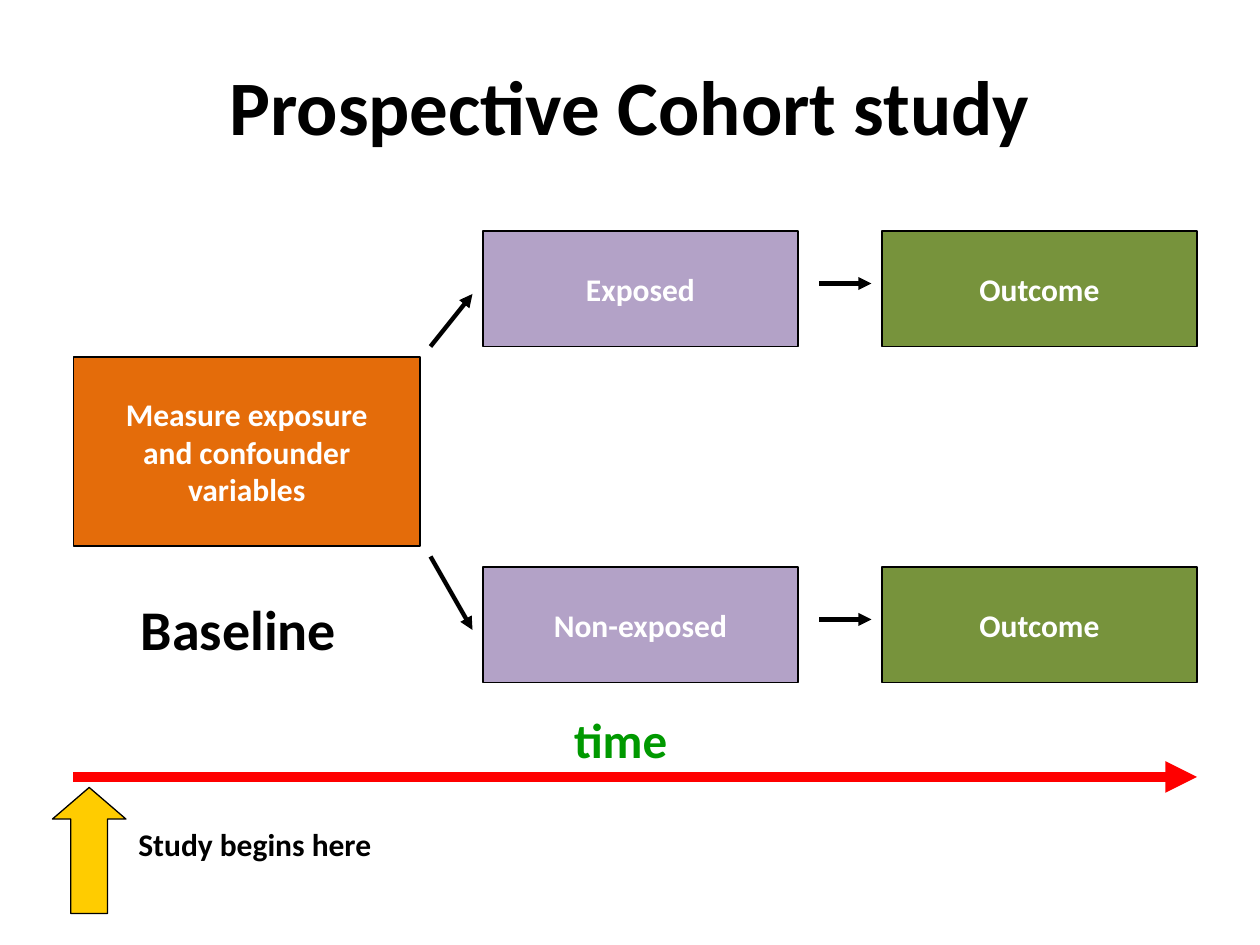
from lxml.etree import SubElement
from pptx import Presentation
from pptx.dml.color import RGBColor
from pptx.enum.shapes import MSO_CONNECTOR as Connector, MSO_SHAPE as Preset
from pptx.enum.text import MSO_ANCHOR as Anchor, MSO_AUTO_SIZE as AutoSize, PP_ALIGN as Align
from pptx.oxml.ns import qn
from pptx.util import Inches, Pt

COLORS = {
    "black": "000000",
    "white": "FFFFFF",
    "measure": "E46C0A",
    "exposure": "B3A2C7",
    "outcome": "77933C",
    "time_axis": "FF0000",
    "time_label": "009900",
    "start": "FFCC00",
}
COLUMNS, ROWS = 120, 90
CELL = Inches(10) // COLUMNS


def color(name):
    return RGBColor.from_string(COLORS[name])


def grid(*cells):
    return [round(cell * CELL) for cell in cells]


def write(text_frame, text, size, color_name, align, anchor=Anchor.TOP, wrap=False):
    text_frame.text = text
    text_frame.word_wrap = wrap
    text_frame.vertical_anchor = anchor
    for paragraph in text_frame.paragraphs:
        paragraph.alignment = align
        for run in paragraph.runs:
            run.font.name = "Calibri"
            run.font.size = Pt(size)
            run.font.bold = True
            run.font.color.rgb = color(color_name)


def add_label(slide, box, text, size, color_name="black"):
    label = slide.shapes.add_textbox(*grid(*box))
    write(label.text_frame, text, size, color_name, Align.LEFT)
    label.text_frame.auto_size = AutoSize.SHAPE_TO_FIT_TEXT


def add_block(slide, preset, box, fill):
    shape = slide.shapes.add_shape(preset, *grid(*box))
    shape.shadow.inherit = False
    shape.fill.solid()
    shape.fill.fore_color.rgb = color(fill)
    shape.line.color.rgb = color("black")
    shape.line.width = Pt(0.75)
    return shape


def add_step(slide, box, text, fill):
    step = add_block(slide, Preset.RECTANGLE, box, fill)
    write(step.text_frame, text, 18, "white", Align.CENTER, Anchor.MIDDLE)


def add_arrow(slide, start, end, color_name="black", width=2.5):
    arrow = slide.shapes.add_connector(Connector.STRAIGHT, *grid(*start, *end))
    arrow.line.color.rgb = color(color_name)
    arrow.line.width = Pt(width)
    SubElement(arrow.line._get_or_add_ln(), qn("a:tailEnd"), type="triangle")
    SubElement(arrow._element.spPr, qn("a:effectLst"))


def add_title(slide, box, text):
    title = slide.shapes.title
    title.left, title.top, title.width, title.height = grid(*box)
    write(title.text_frame, text, 44, "black", Align.CENTER, wrap=True)
    title.text_frame.auto_size = AutoSize.NONE


def add_baseline(slide, box):
    left, top, width, height = box
    add_step(slide, box, "Measure exposure\nand confounder\nvariables", "measure")
    add_label(slide, (left + 5.25, top + height + 4, 21.4, 7.6), "Baseline", 32)


def add_branch(slide, box, group):
    """Place an exposure group, its outcome and the arrow between them."""
    left, top, width, height = box
    step_width = 30
    right = left + width
    add_step(slide, (left, top, step_width, height), group, "exposure")
    add_step(slide, (right - step_width, top, step_width, height), "Outcome", "outcome")
    add_arrow(slide, (left + step_width + 2, top + 5), (right - step_width - 1, top + 5))


def add_timeline(slide, box):
    """Place the time axis along the top of the box and the start marker below."""
    left, top, width, height = box
    add_arrow(slide, (left, top), (left + width, top), "time_axis", 6)
    add_label(slide, (left + 46.5, top - 7, 11.3, 6.8), "time", 28, "time_label")
    marker = add_block(slide, Preset.UP_ARROW, (left - 2, top + 1, 7, height - 1), "start")
    marker.adjustments[0] = 0.5
    marker.adjustments[1] = 0.43
    add_label(slide, (left + 5, top + 4, 32.9, 6), "Study begins here", 18)


def main():
    presentation = Presentation()
    presentation.slide_width, presentation.slide_height = grid(COLUMNS, ROWS)
    slide = presentation.slides.add_slide(presentation.slide_layouts[5])
    add_title(slide, (9, 5, 102, 9), "Prospective Cohort study")
    add_baseline(slide, (7, 34, 33, 18))
    add_branch(slide, (46, 22, 68, 11), "Exposed")
    add_branch(slide, (46, 54, 68, 11), "Non-exposed")
    add_arrow(slide, (41, 33), (45, 28))
    add_arrow(slide, (41, 53), (45, 60))
    add_timeline(slide, (7, 74, 107, 13))
    presentation.save("out.pptx")


if __name__ == "__main__":
    main()
